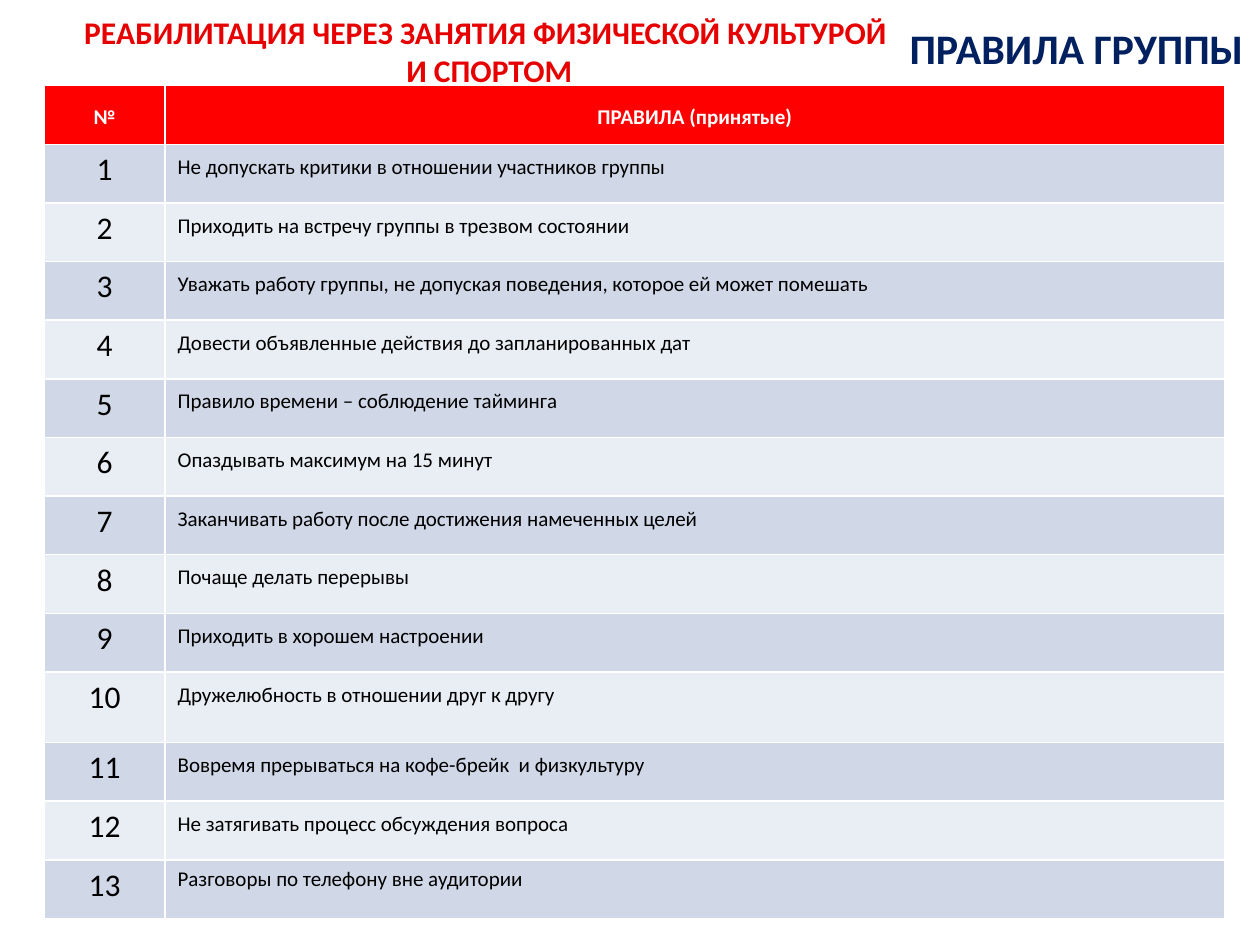
import pptx
import pptx.dml.color
import pptx.enum.text
import pptx.util

Inches = pptx.util.Inches
ALIGN = pptx.enum.text.PP_ALIGN
ANCHOR = pptx.enum.text.MSO_ANCHOR
AUTO_SIZE = pptx.enum.text.MSO_AUTO_SIZE

# Content
PROGRAM_TITLE = "РЕАБИЛИТАЦИЯ ЧЕРЕЗ ЗАНЯТИЯ ФИЗИЧЕСКОЙ КУЛЬТУРОЙ\v И СПОРТОМ"
SLIDE_TITLE = "ПРАВИЛА ГРУППЫ"
HEADERS = ("№", "ПРАВИЛА (принятые)")
RULES = [
    "Не допускать критики в отношении участников группы",
    "Приходить на встречу группы в трезвом состоянии",
    "Уважать работу группы, не допуская поведения, которое ей может помешать",
    "Довести объявленные действия до запланированных дат",
    "Правило времени – соблюдение тайминга",
    "Опаздывать максимум на 15 минут",
    "Заканчивать работу после достижения намеченных целей",
    "Почаще делать перерывы",
    "Приходить в хорошем настроении",
    "Дружелюбность в отношении друг к другу",
    "Вовремя прерываться на кофе-брейк  и физкультуру",
    "Не затягивать процесс обсуждения вопроса",
    "Разговоры по телефону вне аудитории",
]

THEME = {
    "font": "Calibri",
    "navy": "002060", "title_red": "E60000", "header_red": "FF0000",
    "white": "FFFFFF", "black": "000000",
    "bands": ("D0D8E8", "E9EDF4"),
    "slide_title": 24, "program_title": 18, "number": 18, "body": 12,
}

# Table geometry in inches
TABLE_LEFT, TABLE_TOP, TABLE_HEIGHT = 0.35, 0.68, 6.61
COLUMN_WIDTHS = (0.96, 8.41)
TALL_RULE, TALL_HEIGHT = 10, 0.56
ROW_HEIGHT = (TABLE_HEIGHT - TALL_HEIGHT) / len(RULES)


def color(name):
    return pptx.dml.color.RGBColor.from_string(name)


def write(text_frame, text, size, text_color, bold=False, align=None, spacing=None):
    text_frame.text = text
    paragraph = text_frame.paragraphs[0]
    paragraph.alignment = align
    paragraph.line_spacing = spacing
    for run in paragraph.runs:
        run.font.name = THEME["font"]
        run.font.size = pptx.util.Pt(size)
        run.font.bold = bold
        run.font.color.rgb = color(text_color)
    return paragraph


def fill_cell(cell, fill, *text_arguments, **text_options):
    cell.fill.solid()
    cell.fill.fore_color.rgb = color(fill)
    return write(cell.text_frame, *text_arguments, **text_options)


def add_rules_table(slide):
    table = slide.shapes.add_table(
        len(RULES) + 1, len(HEADERS), Inches(TABLE_LEFT), Inches(TABLE_TOP),
        Inches(sum(COLUMN_WIDTHS)), Inches(TABLE_HEIGHT)).table
    for column, width in zip(table.columns, COLUMN_WIDTHS):
        column.width = Inches(width)
    for index, row in enumerate(table.rows):
        row.height = Inches(TALL_HEIGHT if index == TALL_RULE else ROW_HEIGHT)

    # Header row
    for column, header in enumerate(HEADERS):
        fill_cell(table.cell(0, column), THEME["header_red"], header, THEME["body"],
                  THEME["white"], bold=True, align=ALIGN.CENTER, spacing=1.5)

    # Numbered rules in alternating bands
    for number, rule in enumerate(RULES, start=1):
        band = THEME["bands"][(number - 1) % 2]
        last = number == len(RULES)
        fill_cell(table.cell(number, 0), band, str(number), THEME["number"],
                  THEME["black"], align=ALIGN.CENTER)
        paragraph = fill_cell(table.cell(number, 1), band, rule, THEME["body"],
                              THEME["black"], spacing=None if last else 1.15)
        if not last:
            properties = paragraph._p.get_or_add_pPr()
            properties.set("marL", str(Inches(0.38)))
            properties.set("indent", str(Inches(-0.38)))


def main():
    presentation = pptx.Presentation()
    presentation.slide_width = Inches(10)
    presentation.slide_height = Inches(7.5)
    slide = presentation.slides.add_slide(presentation.slide_layouts[6])

    # Slide title, top right
    title_frame = slide.shapes.add_textbox(
        Inches(7.12), Inches(0.13), Inches(2.88), Inches(0.5)).text_frame
    title_frame.word_wrap = False
    title_frame.auto_size = AUTO_SIZE.SHAPE_TO_FIT_TEXT
    write(title_frame, SLIDE_TITLE, THEME["slide_title"], THEME["navy"], bold=True)

    add_rules_table(slide)

    # Program title, top left
    program_frame = slide.shapes.add_textbox(
        Inches(0.28), Inches(0.21), Inches(7.15), Inches(0.39)).text_frame
    program_frame.word_wrap = True
    program_frame.vertical_anchor = ANCHOR.MIDDLE
    write(program_frame, PROGRAM_TITLE, THEME["program_title"], THEME["title_red"],
          bold=True, align=ALIGN.CENTER)

    presentation.save("out.pptx")


if __name__ == "__main__":
    main()
